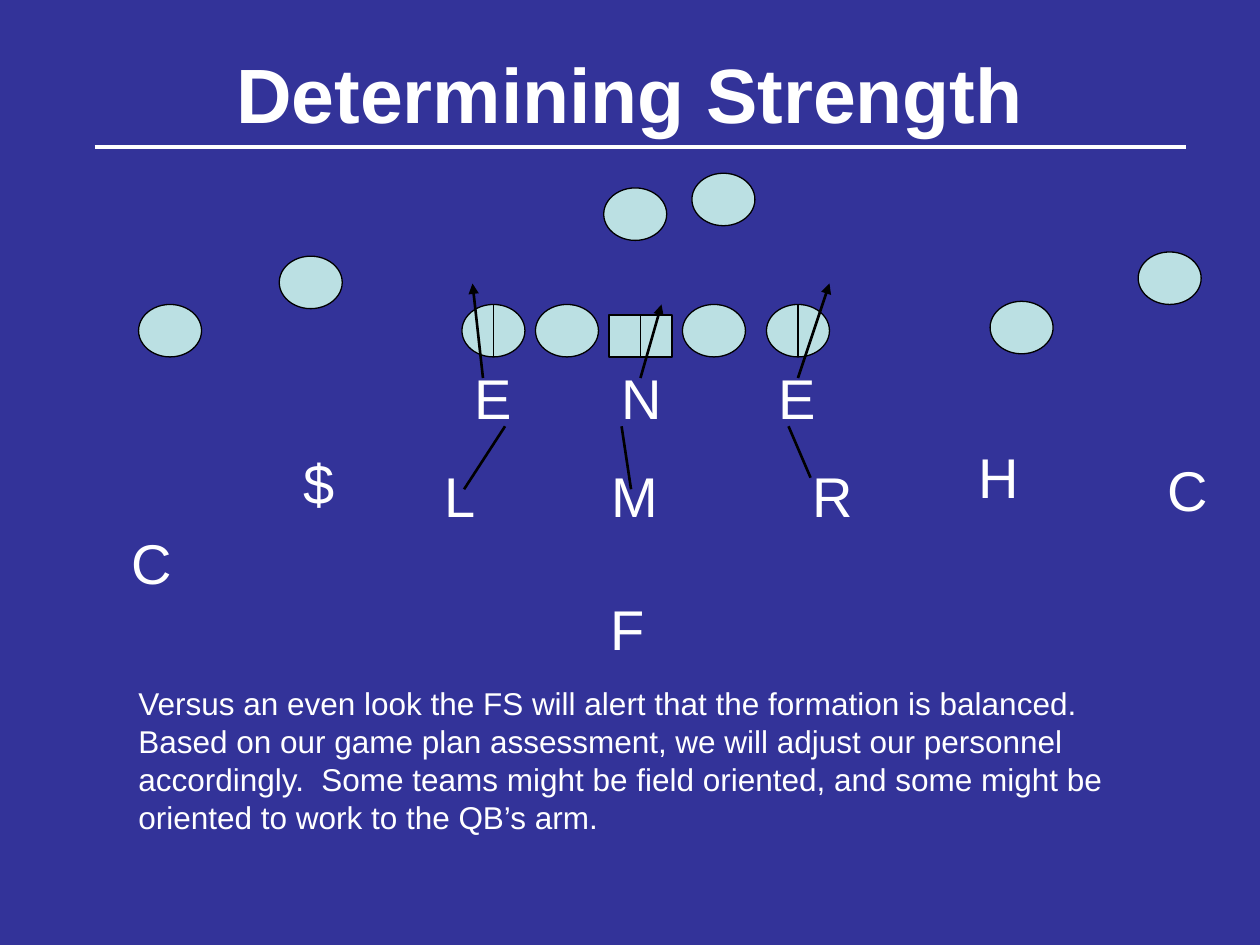
from lxml import etree
from pptx import Presentation
from pptx import util as u
from pptx.dml.color import RGBColor
from pptx.enum import shapes, text
from pptx.oxml import ns

CELL = u.Inches(1) / 12  # the slide is a grid of 120 columns by 90 rows


def grid(*cells):
    return [round(n * CELL) for n in cells]


def tint(code):
    return RGBColor.from_string(code)


def add(node, tag, **attrs):
    return etree.SubElement(node, ns.qn(tag), **attrs)


class Board:
    font, ink, pale, back, fill = "Arial", "000000", "FFFFFF", "333399", "BBE0E3"

    def __init__(self, deck):
        self.slide = deck.slides.add_slide(deck.slide_layouts[5])
        paint = self.slide.background.fill
        paint.solid()
        paint.fore_color.rgb = tint(self.back)

    def style(self, para, size, bold=False):
        for run in para.runs:
            run.font.name, run.font.size = self.font, u.Pt(size)
            run.font.bold = bold
            run.font.color.rgb = tint(self.pale)

    def title(self, words, x, y, w, h):
        box = self.slide.shapes.title
        box.left, box.top, box.width, box.height = grid(x, y, w, h)
        frame = box.text_frame
        frame.text = words
        frame.vertical_anchor = text.MSO_ANCHOR.MIDDLE
        frame.paragraphs[0].alignment = text.PP_ALIGN.CENTER
        self.style(frame.paragraphs[0], 44, True)

    def text(self, words, x, y, w=7, h=7.6, size=32):
        frame = self.slide.shapes.add_textbox(*grid(x, y, w, h)).text_frame
        frame.word_wrap = True
        frame.auto_size = text.MSO_AUTO_SIZE.SHAPE_TO_FIT_TEXT
        frame.text = words
        para = frame.paragraphs[0]
        # Spacing as a share of the line height
        gap = add(para._p.get_or_add_pPr(), "a:spcBef")
        add(gap, "a:spcPct", val="50000")
        self.style(para, size)

    def player(self, x, y, h=5, kind=shapes.MSO_SHAPE.OVAL):
        mark = self.slide.shapes.add_shape(kind, *grid(x, y, 6, h))
        mark.shadow.inherit = False
        mark.fill.solid()
        mark.fill.fore_color.rgb = tint(self.fill)
        mark.line.color.rgb = tint(self.ink)
        mark.line.width = u.Pt(0.75)

    def line(self, ends, width=1.5, color=ink, arrow=False):
        link = self.slide.shapes.add_connector(
            shapes.MSO_CONNECTOR.STRAIGHT, *grid(*ends))
        link.line.color.rgb = tint(color)
        link.line.width = u.Pt(width)
        if arrow:
            add(link.line._get_or_add_ln(), "a:tailEnd", type="triangle")
        add(link._element.spPr, "a:effectLst")


def main():
    deck = Presentation()
    deck.slide_width, deck.slide_height = grid(120, 90)
    board = Board(deck)
    board.title("Determining Strength", 6, 3.6, 108, 10.4)
    board.line((9, 14, 113, 14), 2.25, board.pale)

    # Offense: center, line, then backs and receivers
    board.player(58, 30, 4, shapes.MSO_SHAPE.RECTANGLE)
    for x in (44, 51, 65, 73):
        board.player(x, 29)
    for x, y in ((13.2, 29), (26.6, 24.4), (57.5, 17.9), (65.9, 16.5),
                 (94.3, 28.7), (108.4, 24)):
        board.player(x, y)
    for x, top in ((47, 29), (61, 30), (76, 29)):
        board.line((x, 34, x, top), 0.75)

    # Defense: front, linebackers, secondary
    for name, x, y in (("E", 44, 34), ("N", 58, 34), ("E", 73, 34),
                       ("L", 41.2, 43.4), ("M", 57.1, 43.4), ("R", 76.2, 43.4),
                       ("$", 27.7, 42.1), ("H", 92, 41.6), ("C", 110, 42.8),
                       ("C", 11.3, 49.7), ("F", 57, 56)):
        board.text(name, x, y)
    for rush in ((46, 36, 45, 27), (61, 36, 63, 29), (76, 36, 79, 27)):
        board.line(rush, arrow=True)
    for fit in ((44.2, 46.6, 48.1, 40.6), (60.1, 46.6, 59.2, 40.6),
                (77.2, 45.5, 75.1, 40.6)):
        board.line(fit)

    board.text("Versus an even look the FS will alert that the formation is "
               "balanced.  Based on our game plan assessment, we will adjust "
               "our personnel accordingly.  Some teams might be field oriented, "
               "and some might be oriented to work to the QB’s arm.",
               12, 64.6, 101, 15.6, 18)
    deck.save("out.pptx")


if __name__ == "__main__":
    main()
